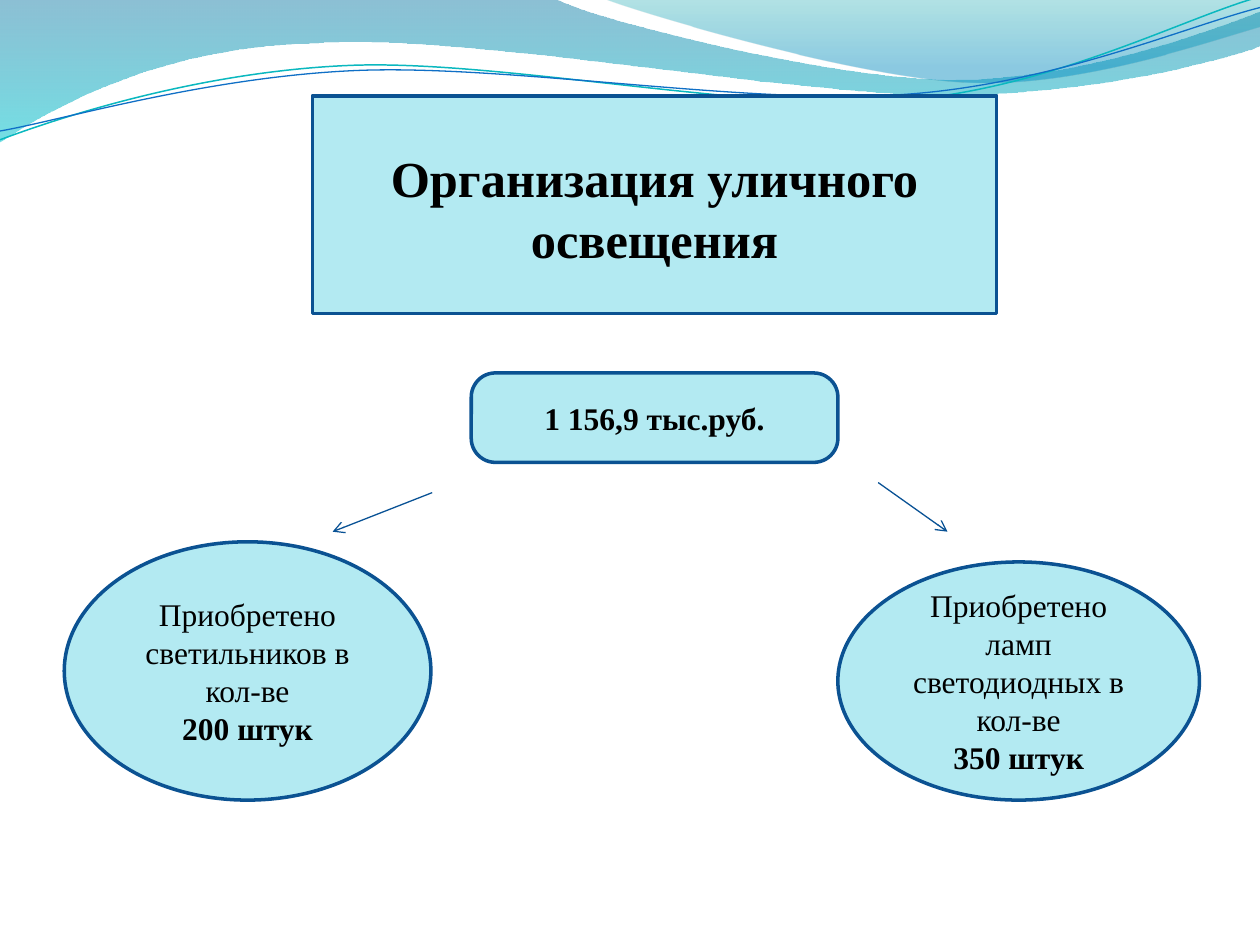
from lxml import etree
from pptx import Presentation
from pptx import util as u
from pptx.dml.color import RGBColor
from pptx.enum import shapes, text
from pptx.oxml import ns

PALE = RGBColor(0xB3, 0xEA, 0xF2)
EDGE = RGBColor(0x0B, 0x52, 0x92)
ARROW = RGBColor(0x09, 0x52, 0x95)
BLACK = RGBColor(0, 0, 0)
TEAL = RGBColor(0x0A, 0xB8, 0xBF)
BLUE = RGBColor(0x0F, 0x6F, 0xC6)
WAVE_TOP = RGBColor(0x00, 0x74, 0xA1)
WAVE_END = RGBColor(0x00, 0xC6, 0xCF)
CREST_TOP = RGBColor(0x00, 0xA1, 0xA9)
CREST_END = RGBColor(0x00, 0x8B, 0xBF)
FONT = "Times New Roman"

WAVE = [(0, 0), (4.4, -0.01),
        (4.76, 0.17, 6.64, 0.63, 7.58, 0.63),
        (8.53, 0.63, 9.58, 0.26, 10, 0.09), (10.01, 0.36),
        (9.83, 0.44, 8.7, 0.76, 7.46, 0.75),
        (6.22, 0.75, 3.82, 0.28, 2.57, 0.34),
        (1.29, 0.36, 0.46, 0.83, -0.01, 1.13)]
CREST = [(4.79, -0.01), (5.09, 0.11, 6.82, 0.62, 7.69, 0.65),
         (8.56, 0.69, 9.61, 0.32, 10, 0.21), (10, 0)]
TEAL_LINE = [(0, 1.11), (0.48, 0.93, 1.58, 0.57, 2.77, 0.52),
             (3.95, 0.47, 5.93, 0.89, 7.13, 0.8),
             (8.33, 0.71, 9.38, 0.15, 9.98, -0.02)]
BLUE_LINE = [(0, 1.04), (0.47, 0.96, 1.64, 0.61, 2.83, 0.56),
             (4.03, 0.51, 5.97, 0.84, 7.17, 0.75),
             (8.36, 0.67, 9.41, 0.21, 10, 0.06)]


def add_outline(s, segments, close):
    segs = [tuple(map(u.Inches, seg)) for seg in segments]
    fb = s.shapes.build_freeform(*segs[0])
    fb.add_line_segments([seg[-2:] for seg in segs[1:]], close=close)
    sp = fb.convert_to_shape()
    sp.shadow.inherit = False
    lines = list(sp._element.spPr.iter(ns.qn("a:lnTo")))
    for line, seg in zip(lines, segs[1:]):
        if len(seg) == 6:
            curve = etree.Element(ns.qn("a:cubicBezTo"))
            for x, y in (seg[:2], seg[2:4], seg[4:]):
                etree.SubElement(curve, ns.qn("a:pt"),
                                 x=str(x - sp.left), y=str(y - sp.top))
            line.getparent().replace(line, curve)
    return sp


def add_wave(s, segments, stops):
    sp = add_outline(s, segments, True)
    sp.line.fill.background()
    sp.fill.gradient()
    sp.fill.gradient_angle = 270
    for stop, (pos, color, _) in zip(sp.fill.gradient_stops, stops):
        stop.position = pos
        stop.color.rgb = color
    colors = sp._element.spPr.iter(ns.qn("a:srgbClr"))
    for clr, (_, _, opacity) in zip(colors, stops):
        etree.SubElement(clr, ns.qn("a:alpha"), val=str(opacity * 1000))


def add_header(s):
    add_wave(s, WAVE, [(0, WAVE_TOP, 45), (1, WAVE_END, 55)])
    add_wave(s, CREST, [(0, CREST_TOP, 30), (0.8, CREST_END, 45)])
    for segments, color, width in ((TEAL_LINE, TEAL, 0.85),
                                   (BLUE_LINE, BLUE, 0.75)):
        sp = add_outline(s, segments, False)
        sp.fill.background()
        sp.line.color.rgb = color
        sp.line.width = u.Pt(width)


def style_box(sp, paragraphs, size):
    sp.fill.solid()
    sp.fill.fore_color.rgb = PALE
    sp.line.color.rgb = EDGE
    sp.line.width = u.Pt(2)
    tf = sp.text_frame
    tf.word_wrap = True
    tf.vertical_anchor = text.MSO_ANCHOR.MIDDLE
    for i, (words, bold) in enumerate(paragraphs):
        p = tf.add_paragraph() if i else tf.paragraphs[0]
        p.alignment = text.PP_ALIGN.CENTER
        r = p.add_run()
        r.text = words
        r.font.name = FONT
        r.font.size = u.Pt(size)
        r.font.bold = bold
        r.font.color.rgb = BLACK


def place_title(s, box, words):
    sp = s.shapes.title
    s.shapes._spTree.append(sp._element)
    sp.left, sp.top, sp.width, sp.height = map(u.Inches, box)
    style_box(sp, [(words, True)], 28.8)
    tf = sp.text_frame
    tf.auto_size = text.MSO_AUTO_SIZE.NONE
    tf.margin_left = tf.margin_right = tf.margin_bottom = 0
    tf.margin_top = u.Inches(0.05)


def add_box(s, kind, box, paragraphs):
    sp = s.shapes.add_shape(kind, *map(u.Inches, box))
    sp.shadow.inherit = False
    style_box(sp, paragraphs, 18)
    return sp


def add_amount(s, box, words):
    sp = add_box(s, shapes.MSO_SHAPE.ROUNDED_RECTANGLE, box, [(words, True)])
    sp.adjustments[0] = 0.27


def add_purchase(s, box, item, count):
    add_box(s, shapes.MSO_SHAPE.OVAL, box, [(item, False), (count, True)])


def add_arrow(s, start, end):
    cx = s.shapes.add_connector(shapes.MSO_CONNECTOR.STRAIGHT,
                                *map(u.Inches, start + end))
    cx.line.color.rgb = ARROW
    cx.line.width = u.Pt(0.75)
    etree.SubElement(cx.line._get_or_add_ln(), ns.qn("a:tailEnd"), type="arrow")
    etree.SubElement(cx._element.spPr, ns.qn("a:effectLst"))


def main():
    prs = Presentation()
    prs.slide_width, prs.slide_height = u.Inches(10), u.Inches(7.5)
    s = prs.slides.add_slide(prs.slide_layouts[5])
    add_header(s)
    place_title(s, (2.48, 0.76, 5.43, 1.73), "Организация уличного освещения")
    add_amount(s, (3.74, 2.96, 2.91, 0.71), "1 156,9 тыс.руб.")
    add_purchase(s, (6.65, 4.46, 2.87, 1.89),
                 "Приобретено ламп светодиодных в кол-ве", "350 штук")
    add_arrow(s, (3.43, 3.91), (2.64, 4.22))
    add_arrow(s, (6.97, 3.83), (7.52, 4.22))
    add_purchase(s, (0.51, 4.3, 2.91, 2.05),
                 "Приобретено светильников в кол-ве", "200 штук")
    prs.save("out.pptx")


if __name__ == "__main__":
    main()
